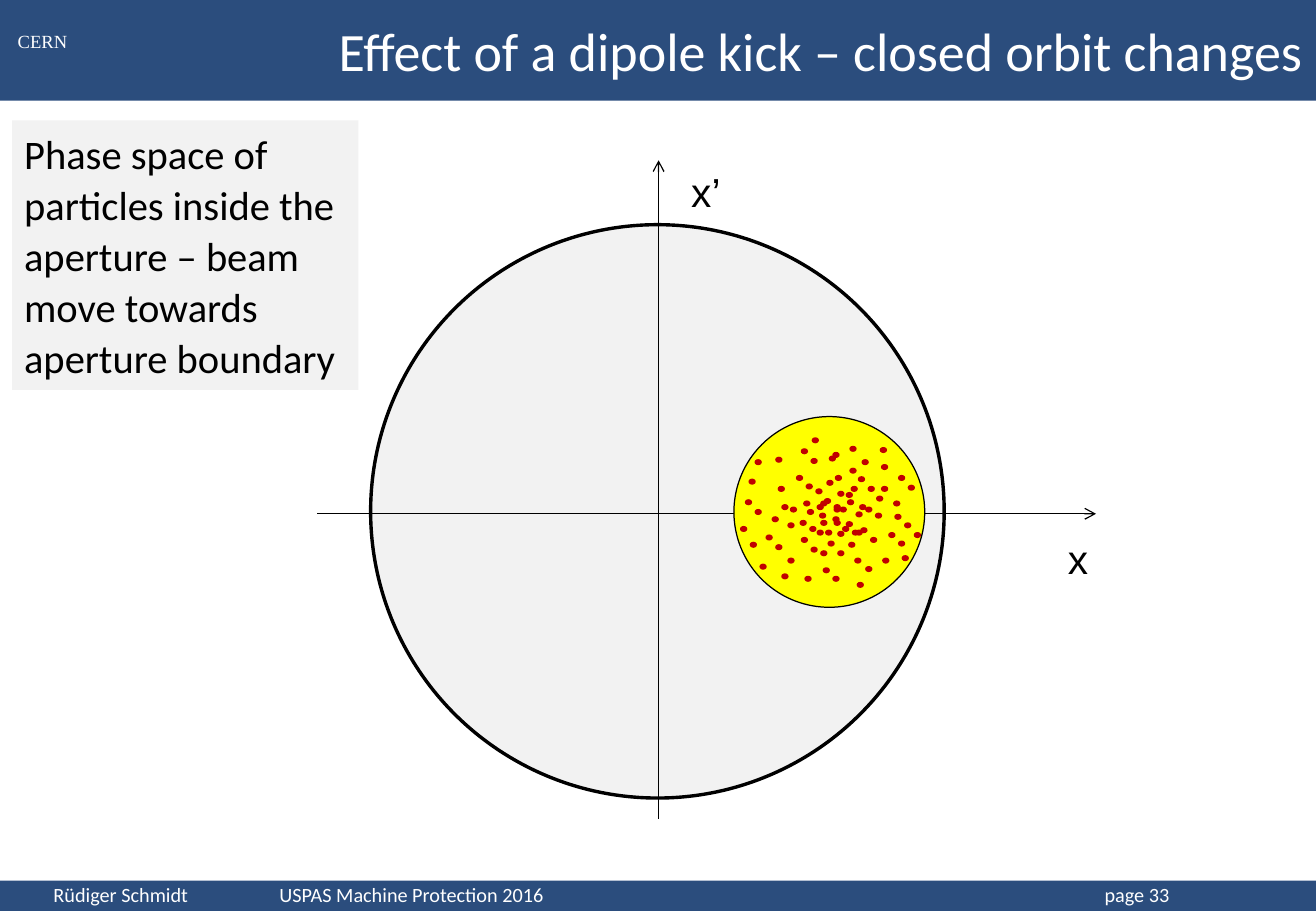
from dataclasses import dataclass

from lxml import etree
from pptx import Presentation
from pptx.dml import color
from pptx.enum import shapes as kinds, text as text_enums
from pptx.oxml import ns
from pptx.shapes import autoshape, base, connector, shapetree
from pptx.text import text as texts
from pptx.util import Inches, Pt

BAR_BLUE, PALE_GREY, WHITE, BLACK = "062F67", "F2F2F2", "FFFFFF", "000000"
BEAM_YELLOW, PARTICLE_RED = "FFFF00", "C00000"
SLIDE_WIDTH, SLIDE_HEIGHT = 10.83, 7.5
FOOTER_TABS = (1.86, 8.65)
PARTICLE_SIZE = (0.06, 0.05)
PARTICLES = (
    (6.21, 3.78), (7.24, 3.68), (7.26, 4.59), (7.08, 4.34), (7.31, 4.38), (7.03, 4.59),
    (7.42, 4.57), (7.16, 4.42), (7.39, 4.45), (7.12, 4.66), (6.77, 4.67), (6.59, 4.42),
    (6.81, 4.45), (6.43, 4.15), (6.85, 4.74), (6.67, 4.5), (6.89, 4.53), (6.62, 4.74),
    (7.09, 3.78), (7.12, 4.17), (6.85, 4.25), (6.89, 4.04), (6.97, 4.11), (6.4, 4),
    (6.35, 4.25), (6.09, 4.33), (6.13, 4.11), (6.17, 4.46), (6.21, 4.19), (6.85, 3.72),
    (6.8, 3.95), (6.55, 3.91), (6.59, 3.69), (6.63, 3.98), (6.67, 3.77), (7, 4),
    (7.2, 4.22), (6.93, 4.33), (6.38, 3.76), (7.35, 4.12), (7.39, 3.91), (6.71, 4.02),
    (7.47, 3.99), (6.99, 3.67), (6.99, 3.85), (7.25, 3.82), (6.48, 4.3), (7.25, 4),
    (6.16, 3.94), (6.3, 4.4), (6.25, 4.64), (6.48, 4.59), (6.43, 4.72), (6.74, 4.22),
    (6.66, 4.33), (6.61, 4.12), (6.38, 4.48), (6.82, 3.75), (6.68, 3.6), (7.05, 4.79),
    (7.06, 3.92), (7.14, 4), (7.21, 4.08), (7.07, 4.15), (6.72, 4.15), (6.75, 4.12),
    (6.86, 4.15), (7.04, 4.21), (6.72, 4.36), (6.58, 4.28), (7.36, 4.23), (7.44, 4.3),
    (7.52, 4.38), (6.78, 4.1), (6.89, 4.37), (6.91, 4.17), (6.86, 4.28), (6.5, 4.17),
    (6.98, 4.46), (6.79, 4.36), (7.01, 4.36), (6.87, 3.91), (6.75, 4.53), (6.64, 4.19),
    (6.86, 4.17), (6.96, 4.29), (6.96, 4.05), (6.75, 4.28), (7.04, 4.36),
)


@dataclass(frozen=True)
class Box:
    left: float
    top: float
    width: float
    height: float

    def lengths(self) -> tuple[Inches, ...]:
        return tuple(Inches(value) for value in (self.left, self.top, self.width, self.height))


@dataclass(frozen=True)
class Style:
    size: float
    font: str = "Calibri"
    color: str = BLACK
    align: text_enums.PP_ALIGN = text_enums.PP_ALIGN.LEFT
    anchor: text_enums.MSO_ANCHOR = text_enums.MSO_ANCHOR.TOP
    wrap: bool = True


@dataclass(frozen=True)
class Axis:
    start: tuple[float, float]
    end: tuple[float, float]
    label: str
    label_box: Box


BARS = (Box(0, 0, SLIDE_WIDTH, 0.83), Box(0, 7.25, SLIDE_WIDTH, 0.25))
AXES = (
    Axis((5.42, 6.74), (5.42, 1.32), "x’", Box(5.59, 1.33, 0.45, 0.5)),
    Axis((2.61, 4.23), (9.02, 4.23), "x", Box(8.69, 4.35, 0.37, 0.5)),
)


def rgb(value: str) -> color.RGBColor:
    return color.RGBColor.from_string(value)


def add_filled(shapes: shapetree._BaseGroupShapes, kind: kinds.MSO_SHAPE, box: Box,
               fill: str, line_width: float = 0) -> autoshape.Shape:
    shape = shapes.add_shape(kind, *box.lengths())
    shape.shadow.inherit = False
    shape.fill.solid()
    shape.fill.fore_color.rgb = rgb(fill)
    if line_width:
        shape.line.color.rgb = rgb(BLACK)
        shape.line.width = Pt(line_width)
    else:
        shape.line.fill.background()
    return shape


def set_opacity(shape: base.BaseShape, percent: int) -> None:
    fill_color = shape.element.spPr.find(ns.qn("a:solidFill"))[0]
    etree.SubElement(fill_color, ns.qn("a:alpha"), val=str(percent * 1000))


def set_tabs(paragraph: texts._Paragraph, positions: tuple[float, ...]) -> None:
    properties = paragraph._p.get_or_add_pPr()
    tabs = etree.SubElement(properties, ns.qn("a:tabLst"))
    for position in positions:
        etree.SubElement(tabs, ns.qn("a:tab"), pos=str(Inches(position)), algn="l")


def write(shape: base.BaseShape, wording: str, style: Style,
          tabs: tuple[float, ...] = ()) -> texts._Paragraph:
    frame = shape.text_frame
    frame.text = wording
    frame.word_wrap = style.wrap
    frame.auto_size = text_enums.MSO_AUTO_SIZE.NONE
    frame.vertical_anchor = style.anchor
    paragraph = frame.paragraphs[0]
    if tabs:
        set_tabs(paragraph, tabs)
    paragraph.alignment = style.align
    paragraph.font.size = Pt(style.size)
    paragraph.font.name = style.font
    paragraph.font.color.rgb = rgb(style.color)
    return paragraph


def add_axis(shapes: shapetree.SlideShapes, axis: Axis) -> connector.Connector:
    ends = (Inches(value) for value in (*axis.start, *axis.end))
    line = shapes.add_connector(kinds.MSO_CONNECTOR.STRAIGHT, *ends)
    line.line.color.rgb = rgb(BLACK)
    line.line.width = Pt(0.75)
    etree.SubElement(line.line._get_or_add_ln(), ns.qn("a:tailEnd"), type="arrow")
    etree.SubElement(line.element.spPr, ns.qn("a:effectLst"))
    label = shapes.add_textbox(*axis.label_box.lengths())
    write(label, axis.label, Style(24, "Arial", wrap=False))
    return line


def add_header_and_footer(shapes: shapetree.SlideShapes) -> None:
    for box in BARS:
        bar = add_filled(shapes, kinds.MSO_SHAPE.RECTANGLE, box, BAR_BLUE)
        set_opacity(bar, 85)
        shapes.title.element.addprevious(bar.element)

    title = shapes.title
    title.left, title.top, title.width, title.height = Box(0.9, 0, 9.93, 0.83).lengths()
    write(title, "Effect of a dipole kick – closed orbit changes",
          Style(32, color=WHITE, align=text_enums.PP_ALIGN.RIGHT,
                anchor=text_enums.MSO_ANCHOR.MIDDLE))

    institute = shapes.add_textbox(*Box(-0.01, 0.2, 0.72, 0.29).lengths())
    write(institute, "CERN",
          Style(11, "Times New Roman", WHITE, text_enums.PP_ALIGN.CENTER))

    footer = shapes.add_textbox(*Box(0, 7.25, 10.65, 0.26).lengths())
    footer.text_frame.margin_left = Inches(0.44)
    write(footer, "Rüdiger Schmidt\tUSPAS Machine Protection 2016\tpage 33",
          Style(12, color=WHITE, anchor=text_enums.MSO_ANCHOR.BOTTOM), FOOTER_TABS)


def add_beam(shapes: shapetree.SlideShapes) -> None:
    beam = shapes.add_group_shape().shapes
    oval = kinds.MSO_SHAPE.OVAL
    add_filled(beam, oval, Box(6.04, 3.43, 1.57, 1.57), BEAM_YELLOW, 0.75)
    for left, top in PARTICLES:
        add_filled(beam, oval, Box(left, top, *PARTICLE_SIZE), PARTICLE_RED)


def main() -> None:
    presentation = Presentation()
    presentation.slide_width = Inches(SLIDE_WIDTH)
    presentation.slide_height = Inches(SLIDE_HEIGHT)
    title_only = presentation.slide_layouts[5]
    shapes = presentation.slides.add_slide(title_only).shapes

    add_header_and_footer(shapes)
    add_filled(shapes, kinds.MSO_SHAPE.OVAL, Box(3.05, 1.85, 4.72, 4.72), PALE_GREY, 2)
    note = add_filled(shapes, kinds.MSO_SHAPE.RECTANGLE, Box(0.1, 0.99, 2.85, 2.22), PALE_GREY)
    paragraph = write(note, "Phase space of particles inside the aperture – "
                      "beam move towards aperture boundary", Style(24))
    paragraph.line_spacing = 1.05
    for axis in AXES:
        add_axis(shapes, axis)
    add_beam(shapes)
    presentation.save("out.pptx")


if __name__ == "__main__":
    main()
